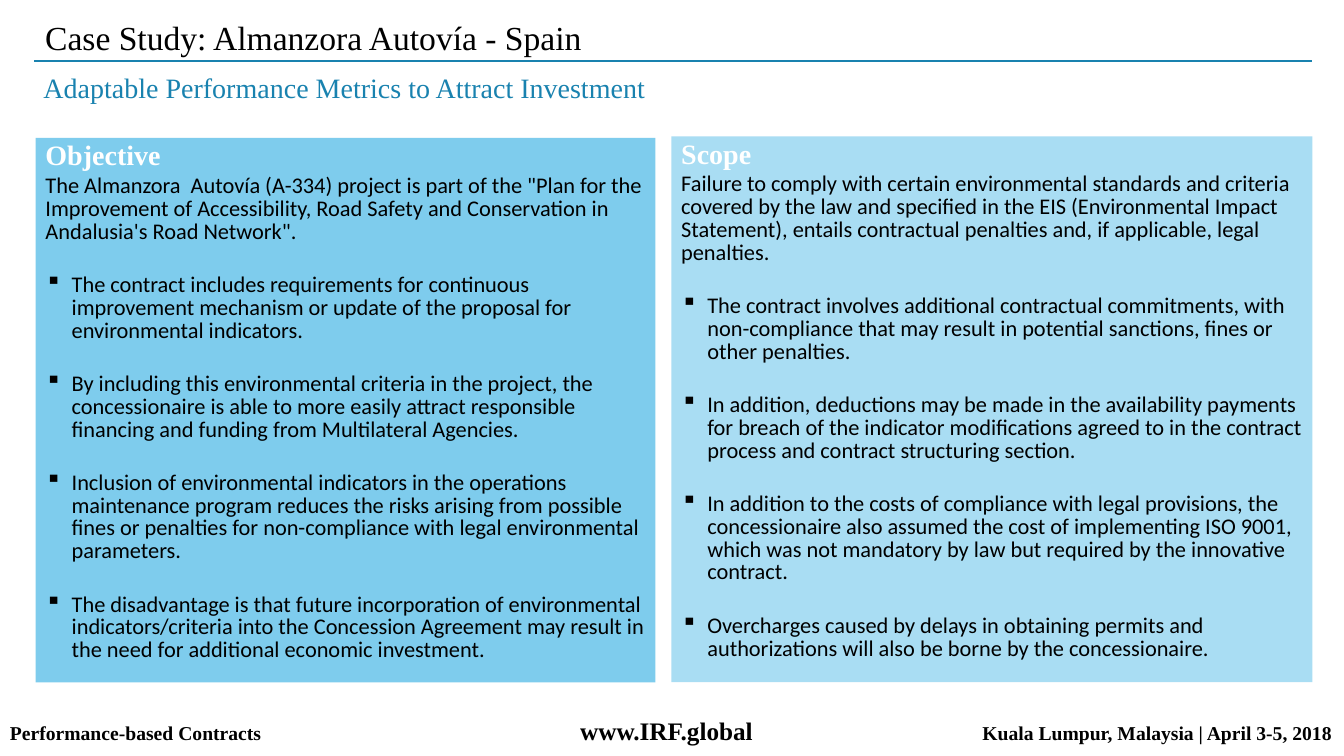
from lxml import etree
from pptx import Presentation
from pptx.dml.color import RGBColor
from pptx.enum.shapes import MSO_CONNECTOR, MSO_SHAPE
from pptx.enum.text import MSO_ANCHOR, PP_ALIGN
from pptx.oxml.ns import qn
from pptx.util import Pt

STRAIGHT = MSO_CONNECTOR.STRAIGHT
RECTANGLE = MSO_SHAPE.RECTANGLE
TOP = MSO_ANCHOR.TOP
LEFT = PP_ALIGN.LEFT

BLACK = RGBColor(0x00, 0x00, 0x00)
WHITE = RGBColor(0xFF, 0xFF, 0xFF)
TEAL = RGBColor(0x19, 0x82, 0xAF)
SKY = RGBColor(0x7E, 0xCC, 0xED)
PALE_SKY = RGBColor(0xA9, 0xDD, 0xF3)

SERIF = "Times New Roman"
SANS = "Calibri"
LINE_SPACING = 0.85
INTRO_GAP = 2.6
BULLET_GAP = 21.8
BULLET_INDENT = 18.72

OBJECTIVE_INTRO = (
    "The Almanzora  Autovía (A-334) project is part of the \"Plan for the Improvement of "
    "Accessibility, Road Safety and Conservation in Andalusia's Road Network\".")
OBJECTIVE_POINTS = [
    "The contract includes requirements for continuous improvement mechanism or update of "
    "the proposal for environmental indicators.",
    "By including this environmental criteria in the project, the concessionaire is able to "
    "more easily attract responsible financing and funding from Multilateral Agencies.",
    "Inclusion of environmental indicators in the operations maintenance program reduces the "
    "risks arising from possible fines or penalties for non-compliance with legal "
    "environmental parameters.",
    "The disadvantage is that future incorporation of environmental indicators/criteria into "
    "the Concession Agreement may result in the need for additional economic investment.",
]
SCOPE_INTRO = (
    "Failure to comply with certain environmental standards and criteria covered by the law "
    "and specified in the EIS (Environmental Impact Statement), entails contractual "
    "penalties and, if applicable, legal penalties.")
SCOPE_POINTS = [
    "The contract involves additional contractual commitments, with non-compliance that may "
    "result in potential sanctions, fines or other penalties.",
    "In addition, deductions may be made in the availability payments for breach of the "
    "indicator modifications agreed to in the contract process and contract structuring "
    "section.",
    "In addition to the costs of compliance with legal provisions, the concessionaire also "
    "assumed the cost of implementing ISO 9001, which was not mandatory by law but required "
    "by the innovative contract.",
    "Overcharges caused by delays in obtaining permits and authorizations will also be borne "
    "by the concessionaire.",
]
FOOTER_PARTS = [
    ("Performance-based Contracts", 14),
    ("\twww.IRF.global", 18),
    ("\tKuala Lumpur, Malaysia | April 3-5, 2018", 14),
]
FOOTER_TABS = [("ctr", 469), ("r", 944.5)]


def set_font(para, name, color, size=None, bold=False):
    font = para.font
    font.name = name
    font.bold = bold
    font.color.rgb = color
    if size:
        font.size = Pt(size)


def add_bullet(para):
    properties = para._p.get_or_add_pPr()
    properties.set("marL", str(Pt(BULLET_INDENT)))
    properties.set("indent", str(-Pt(BULLET_INDENT)))
    etree.SubElement(properties, qn("a:buChar")).set("char", "▪")


def add_tabs(para, stops):
    tab_list = etree.SubElement(para._p.get_or_add_pPr(), qn("a:tabLst"))
    for alignment, position in stops:
        tab = etree.SubElement(tab_list, qn("a:tab"))
        tab.set("pos", str(Pt(position)))
        tab.set("algn", alignment)


def write_para(para, text, name, size, color, bold=False, gap=0, bullet=False):
    para.text = text
    para.alignment = LEFT
    para.line_spacing = LINE_SPACING
    if gap:
        para.space_before = Pt(gap)
    if bullet:
        add_bullet(para)
    set_font(para, name, color, size, bold)


def add_text_box(page, left, top, width, height):
    box = page.shapes.add_textbox(Pt(left), Pt(top), Pt(width), Pt(height))
    box.text_frame.word_wrap = True
    return box.text_frame


def add_heading(page, text, top, height, size, color, inset=7.2):
    frame = add_text_box(page, 25.2, top, 911.5, height)
    frame.margin_left = Pt(inset)
    write_para(frame.paragraphs[0], text, SERIF, size, color)


def add_rule(page, left, right, y):
    rule = page.shapes.add_connector(STRAIGHT, Pt(left), Pt(y), Pt(right), Pt(y))
    rule.line.color.rgb = TEAL
    rule.line.width = Pt(1.5)
    etree.SubElement(rule._element.spPr, qn("a:effectLst"))


def add_panel(page, left, top, width, height, fill, heading, intro, points):
    panel = page.shapes.add_shape(RECTANGLE, Pt(left), Pt(top), Pt(width), Pt(height))
    panel.shadow.inherit = False
    panel.fill.solid()
    panel.fill.fore_color.rgb = fill
    panel.line.fill.background()
    frame = panel.text_frame
    frame.word_wrap = True
    frame.vertical_anchor = TOP
    write_para(frame.paragraphs[0], heading, SERIF, 20, WHITE, bold=True)
    write_para(frame.add_paragraph(), intro, SANS, 16, BLACK, gap=INTRO_GAP)
    for point in points:
        write_para(frame.add_paragraph(), point, SANS, 16, BLACK, gap=BULLET_GAP, bullet=True)


def add_footer(page):
    frame = add_text_box(page, 0, 504, 960, 31.7)
    frame.margin_top = Pt(6.6)
    para = frame.paragraphs[0]
    add_tabs(para, FOOTER_TABS)
    set_font(para, SERIF, BLACK, bold=True)
    for text, size in FOOTER_PARTS:
        span = para.add_run()
        span.text = text
        span.font.size = Pt(size)


def main():
    deck = Presentation()
    deck.slide_width, deck.slide_height = Pt(960), Pt(540)
    page = deck.slides.add_slide(deck.slide_layouts[6])

    # Headings and rule
    add_rule(page, 24.5, 937.4, 43.5)
    add_heading(page, "Case Study: Almanzora Autovía - Spain", 13, 38.2, 24, BLACK)
    add_heading(page, "Adaptable Performance Metrics to Attract Investment",
                50.4, 38.9, 20, TEAL, inset=5.8)

    # Panels
    add_panel(page, 25.4, 98.6, 442.8, 388.8, SKY,
              "Objective", OBJECTIVE_INTRO, OBJECTIVE_POINTS)
    add_panel(page, 479.5, 97.4, 457.9, 389.8, PALE_SKY,
              "Scope", SCOPE_INTRO, SCOPE_POINTS)

    # Footer
    add_footer(page)
    deck.save("out.pptx")


if __name__ == "__main__":
    main()
